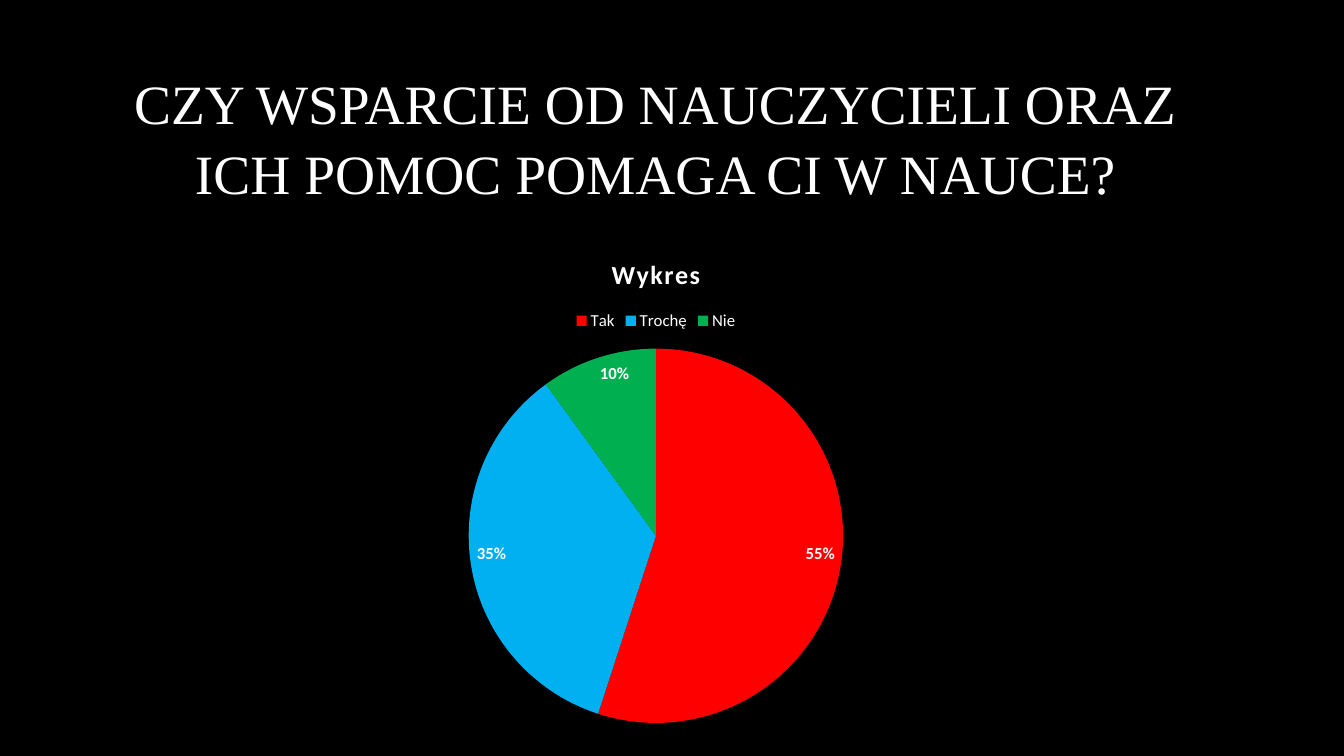
from dataclasses import dataclass
from typing import Any

import pptx
import pptx.chart.data
import pptx.dml.color
import pptx.enum.chart
import pptx.enum.text
import pptx.util

SLIDE_WIDTH = pptx.util.Inches(13.33)
SLIDE_HEIGHT = pptx.util.Inches(7.5)
WHITE = "FFFFFF"
BLACK = "000000"


@dataclass(frozen=True)
class Area:
    left: float
    top: float
    width: float
    height: float

    def box(self) -> tuple[int, int, int, int]:
        return (
            round(SLIDE_WIDTH * self.left / 100),
            round(SLIDE_HEIGHT * self.top / 100),
            round(SLIDE_WIDTH * self.width / 100),
            round(SLIDE_HEIGHT * self.height / 100),
        )


@dataclass(frozen=True)
class Answer:
    label: str
    percent: int
    color: str


QUESTION = "CZY WSPARCIE OD NAUCZYCIELI ORAZ ICH POMOC POMAGA CI W NAUCE?"
QUESTION_AREA = Area(7.2, 7.33, 83.12, 21.2)
RESULTS_AREA = Area(5.63, 31.2, 86.35, 66.27)
ANSWERS = [
    Answer("Tak", 55, "FF0000"),
    Answer("Trochę", 35, "00B0F0"),
    Answer("Nie", 10, "00B050"),
]


def rgb(value: str) -> pptx.dml.color.RGBColor:
    return pptx.dml.color.RGBColor.from_string(value)


def apply(target: Any, values: dict[str, Any]) -> None:
    for name, value in values.items():
        setattr(target, name, value)


def style_font(font: Any, size: float, name: str = "Calibri", bold: bool = False) -> None:
    apply(font, {"size": pptx.util.Pt(size), "name": name, "bold": bold})
    font.color.rgb = rgb(WHITE)


def fill_solid(fill: Any, color: str) -> None:
    fill.solid()
    fill.fore_color.rgb = rgb(color)


def add_question(slide: Any) -> None:
    frame = slide.shapes.add_textbox(*QUESTION_AREA.box()).text_frame
    apply(frame, {
        "word_wrap": True,
        "vertical_anchor": pptx.enum.text.MSO_ANCHOR.MIDDLE,
    })
    paragraph = frame.paragraphs[0]
    apply(paragraph, {
        "alignment": pptx.enum.text.PP_ALIGN.CENTER,
        "line_spacing": 1.05,
    })
    run = paragraph.add_run()
    run.text = QUESTION
    style_font(run.font, 39.6, "Times New Roman")


def add_results(slide: Any) -> None:
    survey = pptx.chart.data.CategoryChartData()
    survey.categories = [answer.label for answer in ANSWERS]
    survey.add_series("Wykres", [answer.percent for answer in ANSWERS])
    chart = slide.shapes.add_chart(
        pptx.enum.chart.XL_CHART_TYPE.PIE, *RESULTS_AREA.box(), survey
    ).chart
    style_font(chart.font, 10)

    apply(chart, {"has_title": True, "has_legend": True})
    heading = chart.chart_title.text_frame.paragraphs[0].add_run()
    heading.text = "Wykres"
    style_font(heading.font, 18.6, bold=True)
    heading._r.get_or_add_rPr().set("spc", "100")

    apply(chart.legend, {
        "position": pptx.enum.chart.XL_LEGEND_POSITION.TOP,
        "include_in_layout": False,
    })
    style_font(chart.legend.font, 12)

    pie = chart.plots[0]
    apply(pie, {"vary_by_categories": True, "has_data_labels": True})
    apply(pie.data_labels, {
        "show_percentage": True,
        "show_value": False,
        "number_format": "0%",
        "number_format_is_linked": False,
        "position": pptx.enum.chart.XL_LABEL_POSITION.INSIDE_END,
    })
    style_font(pie.data_labels.font, 12, bold=True)

    for index, answer in enumerate(ANSWERS):
        portion = pie.series[0].points[index].format
        fill_solid(portion.fill, answer.color)
        portion.line.fill.background()


def main() -> None:
    presentation = pptx.Presentation()
    apply(presentation, {"slide_width": SLIDE_WIDTH, "slide_height": SLIDE_HEIGHT})
    slide = presentation.slides.add_slide(presentation.slide_layouts[6])
    fill_solid(slide.background.fill, BLACK)
    add_question(slide)
    add_results(slide)
    presentation.save("out.pptx")


if __name__ == "__main__":
    main()
